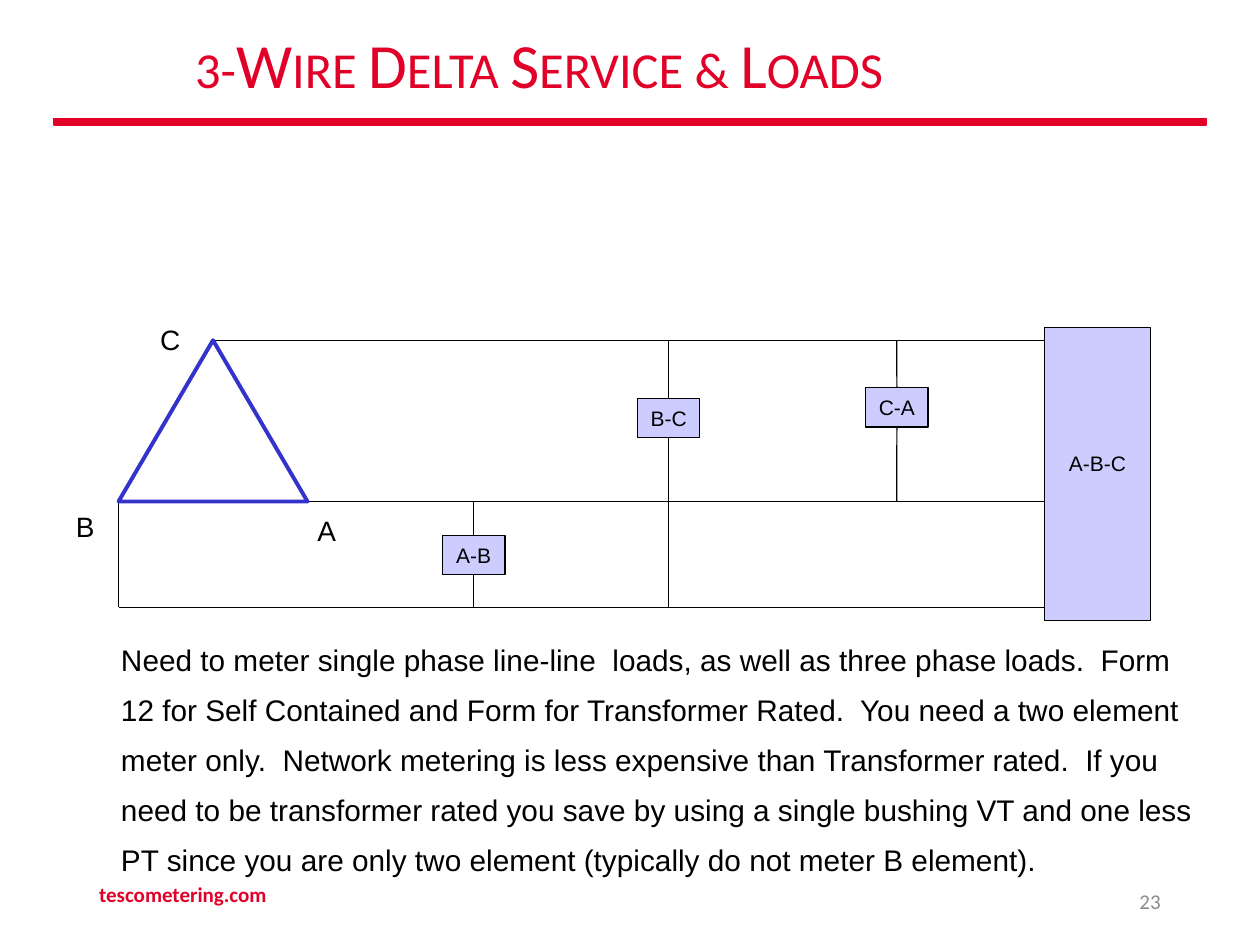
from lxml import etree
from pptx import Presentation
from pptx.dml.color import RGBColor
from pptx.enum.shapes import MSO_CONNECTOR, MSO_SHAPE
from pptx.enum.text import MSO_ANCHOR, MSO_AUTO_SIZE, PP_ALIGN
from pptx.oxml.ns import qn
from pptx.util import Cm, Pt

RED = RGBColor(0xE1, 0x00, 0x27)
BLUE = RGBColor(0x33, 0x33, 0xCC)
LAVENDER = RGBColor(0xCC, 0xCC, 0xFF)
BLACK = RGBColor(0x00, 0x00, 0x00)
GRAY = RGBColor(0x8C, 0x8C, 0x8C)

EXPLANATION = (
    "Need to meter single phase line-line  loads, as well as three phase loads.  "
    "Form 12 for Self Contained and Form for Transformer Rated.  You need a two "
    "element meter only.  Network metering is less expensive than Transformer "
    "rated.  If you need to be transformer rated you save by using a single "
    "bushing VT and one less PT since you are only two element (typically do not "
    "meter B element)."
)


def write(frame, text, size, color=BLACK, font="Arial", bold=False,
          align=PP_ALIGN.LEFT, anchor=MSO_ANCHOR.TOP, margin=None):
    """Fill a text frame with one formatted paragraph and return the paragraph."""
    frame.word_wrap = True
    frame.auto_size = MSO_AUTO_SIZE.NONE
    frame.vertical_anchor = anchor
    if margin is not None:
        frame.margin_left = frame.margin_right = margin
        frame.margin_top = frame.margin_bottom = margin
    frame.text = text
    paragraph = frame.paragraphs[0]
    paragraph.alignment = align
    run_font = paragraph.runs[0].font
    run_font.name, run_font.size, run_font.bold = font, Pt(size), bold
    run_font.color.rgb = color
    return paragraph


def add_text(slide, box, text, size, **style):
    frame = slide.shapes.add_textbox(*map(Cm, box)).text_frame
    return write(frame, text, size, **style)


def add_outline(slide, kind, box, fill, line, weight):
    shape = slide.shapes.add_shape(kind, *map(Cm, box))
    shape.shadow.inherit = False
    if fill is None:
        shape.fill.background()
    else:
        shape.fill.solid()
        shape.fill.fore_color.rgb = fill
    shape.line.color.rgb = line
    shape.line.width = Pt(weight)
    return shape


def add_wire(slide, x1, y1, x2, y2):
    wire = slide.shapes.add_connector(MSO_CONNECTOR.STRAIGHT,
                                      Cm(x1), Cm(y1), Cm(x2), Cm(y2))
    wire.line.color.rgb = BLACK
    wire.line.width = Pt(0.72)
    etree.SubElement(wire._element.spPr, qn("a:effectLst"))
    return wire


def add_load(slide, box, name):
    load = add_outline(slide, MSO_SHAPE.RECTANGLE, box, LAVENDER, BLACK, 0.72)
    write(load.text_frame, name, 12, align=PP_ALIGN.CENTER,
          anchor=MSO_ANCHOR.MIDDLE, margin=0)
    return load


def add_header(slide, left, top, width):
    add_outline(slide, MSO_SHAPE.RECTANGLE, (left, top + 1.96, width, 0.13), RED, RED, 1)
    title = slide.shapes.title
    title.left, title.top = Cm(left + 2.59), Cm(top)
    title.width, title.height = Cm(21.6), Cm(1.88)
    heading = write(title.text_frame, "3-Wire Delta Service & Loads", 36, color=RED,
                    font="Calibri", anchor=MSO_ANCHOR.MIDDLE)
    heading.line_spacing = 0.9
    heading.runs[0].font._element.set("cap", "small")


def add_delta_service(slide, left, top, width, height):
    """Delta source on the left, three phase wires, and the loads between them."""
    load_width, load_height = 1.26, 0.79
    service_width = 2.13
    service_left = left + width - service_width
    delta_left, delta_width = left + 0.89, 3.81
    phase_y = {"C": top + 0.41, "A": top + 3.66, "B": top + 5.79}
    phase_x = {"C": delta_left + delta_width / 2, "A": delta_left + delta_width,
               "B": delta_left}

    three_phase = add_load(slide, (service_left, top + 0.15, service_width, height - 0.15),
                           "A-B-C")
    three_phase.text_frame.margin_bottom = Cm(0.45)

    for phase, y in phase_y.items():
        add_wire(slide, phase_x[phase], y, service_left, y)
    add_wire(slide, delta_left, phase_y["A"], delta_left, phase_y["B"])

    single_phase = [("A-B", 8.05, 4.35, "A", "B"),
                    ("C-A", 16.58, 1.37, "C", "A"),
                    ("B-C", 11.98, 1.58, "C", "B")]
    for name, center, offset, upper, lower in single_phase:
        x, y = left + center, top + offset
        load = add_load(slide, (x - load_width / 2, y, load_width, load_height), name)
        add_wire(slide, x, phase_y[upper], x, y).end_connect(load, 0)
        add_wire(slide, x, phase_y[lower], x, y + load_height).end_connect(load, 2)

    add_outline(slide, MSO_SHAPE.ISOSCELES_TRIANGLE,
                (delta_left, phase_y["C"], delta_width, phase_y["A"] - phase_y["C"]),
                None, BLUE, 2.25)
    for phase, x, y in [("A", 4.9, 3.9), ("C", 1.73, 0.06), ("B", 0.03, 3.82)]:
        add_text(slide, (left + x, top + y, 0.6, 0.7), phase, 16, margin=0)


def add_explanation(slide, left, top, width, height):
    body = add_text(slide, (left, top, width, height), EXPLANATION, 17, margin=0)
    body.line_spacing = Pt(28.6)


def add_footer(slide, left, top, width):
    number_width = 5.72
    add_text(slide, (left, top, 8.59, 1.02), "tescometering.com", 12, color=RED,
             font="Calibri", bold=True)
    add_text(slide, (left + width - number_width, top, number_width, 1.02), "23", 12,
             color=GRAY, font="Calibri", align=PP_ALIGN.RIGHT, anchor=MSO_ANCHOR.MIDDLE)


def main():
    deck = Presentation()
    deck.slide_width, deck.slide_height = Cm(25.4), Cm(19.05)
    slide = deck.slides.add_slide(deck.slide_layouts[5])
    add_header(slide, 1.09, 0.43, 23.22)
    add_delta_service(slide, 1.5, 6.45, 21.69, 6.06)
    add_explanation(slide, 2.44, 12.64, 21.7, 5)
    add_footer(slide, 1.75, 17.65, 21.9)
    deck.save("out.pptx")


if __name__ == "__main__":
    main()
